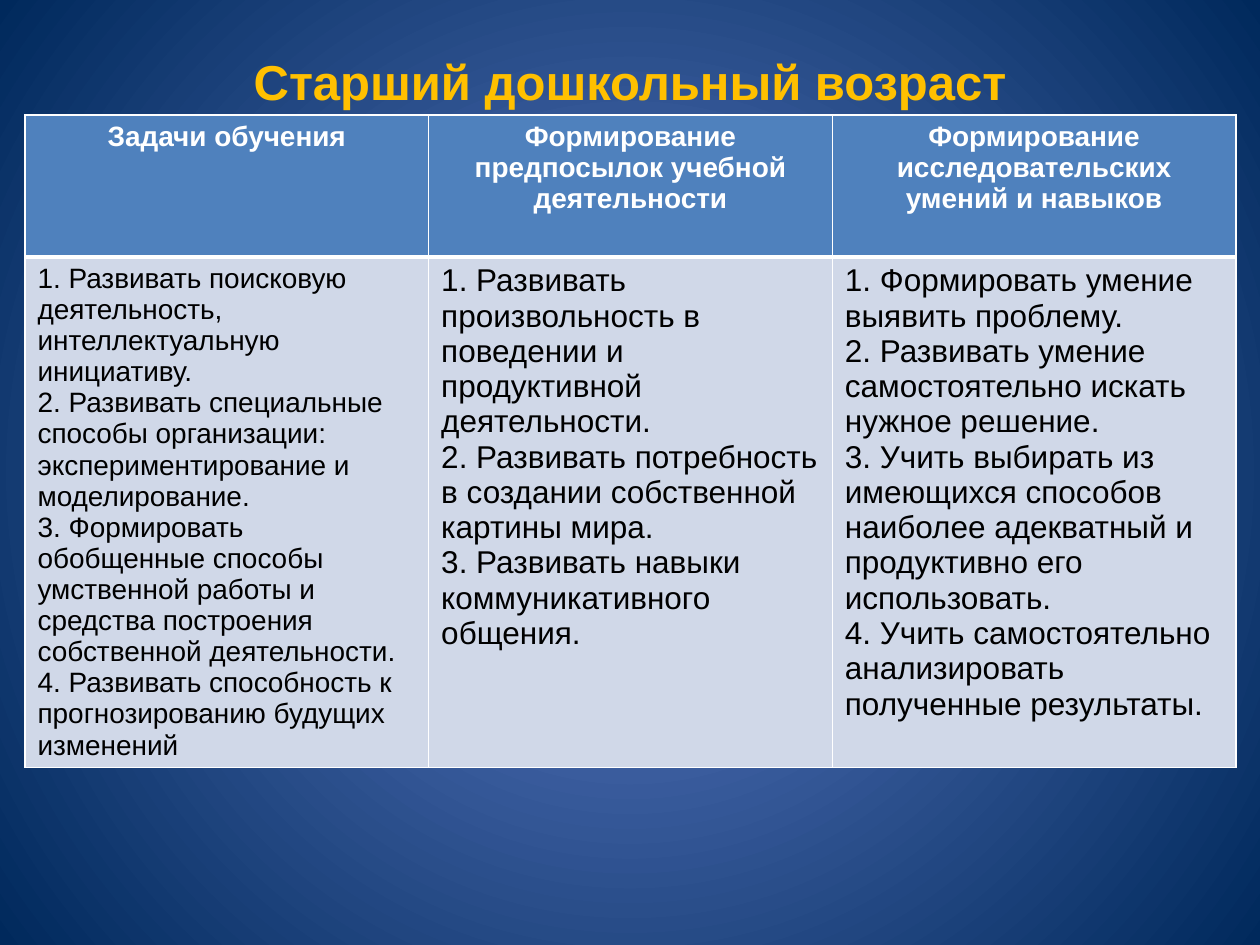
from dataclasses import dataclass

from lxml import etree
from pptx import Presentation
from pptx import util as u
from pptx.dml.color import RGBColor
from pptx.enum import text
from pptx.oxml import ns

EMU_PER_PX = 914400 / 126


def px(length):
    return u.Emu(round(length * EMU_PER_PX))


@dataclass(frozen=True)
class Theme:
    font: str = "Arial"
    glow: str = "5E7CC5"
    edge: str = "00295C"
    title: str = "FFC000"
    header_fill: str = "4F81BD"
    header_text: str = "FFFFFF"
    body_fill: str = "D0D8E8"
    body_text: str = "000000"
    border: str = "FFFFFF"
    title_size: int = 28
    header_size: int = 16
    body_sizes: tuple = (16, 18, 18)


HEADERS = [
    "Задачи обучения",
    "Формирование предпосылок учебной деятельности",
    "Формирование исследовательских умений и навыков",
]
GOALS = [
    [
        "1. Развивать поисковую деятельность, интеллектуальную инициативу.",
        "2. Развивать специальные способы организации: экспериментирование и моделирование.",
        "3. Формировать обобщенные способы умственной работы и средства построения собственной деятельности.",
        "4. Развивать способность к прогнозированию будущих изменений",
    ],
    [
        "1. Развивать произвольность в поведении и продуктивной деятельности.",
        "2. Развивать потребность в создании собственной картины мира.",
        "3. Развивать навыки коммуникативного общения.",
    ],
    [
        "1. Формировать умение выявить проблему.",
        "2. Развивать умение самостоятельно искать нужное решение.",
        "3. Учить выбирать из имеющихся способов наиболее адекватный и продуктивно его использовать.",
        "4. Учить самостоятельно анализировать полученные результаты.",
    ],
]


class SlideBuilder:
    """Holds the theme and the current slide and draws each kind of element."""

    def __init__(self, slide, theme):
        self.slide = slide
        self.theme = theme

    def background(self):
        fill = self.slide.background.fill
        fill.gradient()
        for stop, color in zip(fill.gradient_stops, (self.theme.glow, self.theme.edge)):
            stop.color.rgb = RGBColor.from_string(color)
        gradient = self.slide.element.find(".//" + ns.qn("a:gradFill"))
        gradient.remove(gradient.find(ns.qn("a:lin")))
        circle = etree.Element(ns.qn("a:path"), {"path": "circle"})
        center = dict.fromkeys("ltrb", "50000")
        etree.SubElement(circle, ns.qn("a:fillToRect"), center)
        gradient.find(ns.qn("a:gsLst")).addnext(circle)

    def fill_text(self, frame, lines, size, color, bold=False, align=text.PP_ALIGN.LEFT):
        frame.text = "\n".join(lines)
        for paragraph in frame.paragraphs:
            paragraph.alignment = align
            for run in paragraph.runs:
                run.font.name = self.theme.font
                run.font.size = u.Pt(size)
                run.font.bold = bold
                run.font.color.rgb = RGBColor.from_string(color)

    def title(self, words, left, top, width, height):
        shape = self.slide.shapes.title
        shape.left, shape.top, shape.width, shape.height = map(px, (left, top, width, height))
        frame = shape.text_frame
        frame.auto_size = text.MSO_AUTO_SIZE.NONE
        frame.vertical_anchor = text.MSO_ANCHOR.TOP
        self.fill_text(frame, [words], self.theme.title_size, self.theme.title,
                       True, text.PP_ALIGN.CENTER)

    def cell(self, cell, fill, top=1, bottom=1):
        cell.fill.solid()
        cell.fill.fore_color.rgb = RGBColor.from_string(fill)
        properties = cell.fill._xPr
        sides = (("L", 1), ("R", 1), ("T", top), ("B", bottom))
        for index, (side, points) in enumerate(sides):
            line = etree.Element(ns.qn(f"a:ln{side}"), w=str(int(u.Pt(points))))
            line_fill = etree.SubElement(line, ns.qn("a:solidFill"))
            etree.SubElement(line_fill, ns.qn("a:srgbClr"), val=self.theme.border)
            properties.insert(index, line)

    def table(self, headers, bodies, left, top, width, row_heights):
        theme = self.theme
        frame = self.slide.shapes.add_table(
            2, len(headers), *map(px, (left, top, width, sum(row_heights))))
        table = frame.table
        for row, height in zip(table.rows, row_heights):
            row.height = px(height)
        for column, (header, body) in enumerate(zip(headers, bodies)):
            head_cell, body_cell = table.cell(0, column), table.cell(1, column)
            self.cell(head_cell, theme.header_fill, bottom=3)
            self.fill_text(head_cell.text_frame, [header], theme.header_size,
                           theme.header_text, True, text.PP_ALIGN.CENTER)
            self.cell(body_cell, theme.body_fill, top=3)
            self.fill_text(body_cell.text_frame, body, theme.body_sizes[column],
                           theme.body_text)


def main():
    presentation = Presentation()
    presentation.slide_width, presentation.slide_height = px(1260), px(945)
    slide = presentation.slides.add_slide(presentation.slide_layouts[5])
    builder = SlideBuilder(slide, Theme())
    builder.background()
    builder.title("Старший дошкольный возраст", 0, 45, 1260, 70)
    builder.table(HEADERS, GOALS, 25, 115, 1211, (142, 510))
    presentation.save("out.pptx")


if __name__ == "__main__":
    main()
